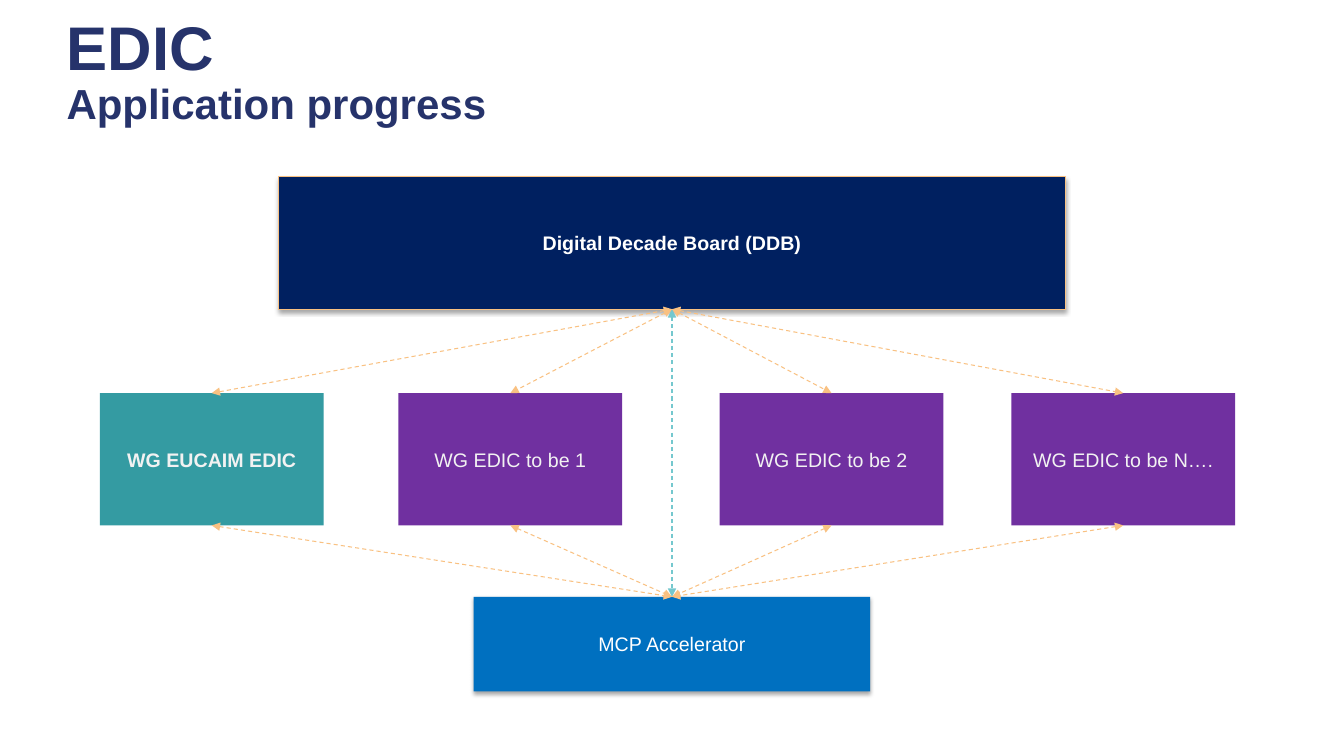
from dataclasses import dataclass

from lxml.etree import SubElement
from pptx import Presentation
from pptx.dml.color import RGBColor
from pptx.enum.dml import MSO_LINE
from pptx.enum.shapes import MSO_CONNECTOR, MSO_SHAPE
from pptx.enum.text import MSO_ANCHOR, MSO_AUTO_SIZE, PP_ALIGN
from pptx.oxml.ns import qn
from pptx.util import Inches, Pt

TOP, BOTTOM = 0, 2  # connection sites of a rectangle


@dataclass(frozen=True)
class Theme:
    font: str = "Arial"
    title: str = "26336B"
    navy: str = "002060"
    blue: str = "0070C0"
    purple: str = "7030A0"
    teal: str = "349BA2"
    aqua: str = "75C8CE"
    orange: str = "F9C182"
    white: str = "FFFFFF"
    pale: str = "F2F2F2"
    title_size: int = 44
    subtitle_size: int = 30
    box_size: int = 14
    line_width: float = 0.75


def add_text(p, text, *, font, size, color, bold=False):
    r = p.add_run()
    r.text = text
    r.font.name, r.font.size, r.font.bold = font, Pt(size), bold
    r.font.color.rgb = RGBColor.from_string(color)


class Deck:
    """Style and current slide; lengths are percentages of the slide's size."""

    def __init__(self, prs, theme):
        self.theme = theme
        self.col, self.row = prs.slide_width / 100, prs.slide_height / 100
        self.s = prs.slides.add_slide(prs.slide_layouts[5])

    def place(self, x, y, w, h):
        return (round(x * self.col), round(y * self.row),
                round(w * self.col), round(h * self.row))

    def title(self, title, subtitle, *at):
        t, sp = self.theme, self.s.shapes.title
        sp.left, sp.top, sp.width, sp.height = self.place(*at)
        tf = sp.text_frame
        tf.auto_size, tf.vertical_anchor = MSO_AUTO_SIZE.NONE, MSO_ANCHOR.MIDDLE
        p = tf.paragraphs[0]
        p.alignment, p.line_spacing = PP_ALIGN.LEFT, 0.9
        style = dict(font=t.font, color=t.title, bold=True)
        add_text(p, title, size=t.title_size, **style)
        p.add_line_break()
        add_text(p, subtitle, size=t.subtitle_size, **style)

    def box(self, text, *at, fill, color, bold=False, line=None, shadow=False):
        t = self.theme
        sp = self.s.shapes.add_shape(MSO_SHAPE.RECTANGLE, *self.place(*at))
        sp.fill.solid()
        sp.fill.fore_color.rgb = RGBColor.from_string(fill)
        if line:
            sp.line.color.rgb = RGBColor.from_string(line)
            sp.line.width = Pt(t.line_width)
        else:
            sp.line.fill.background()
        sp.shadow.inherit = False
        if shadow:
            self.drop_shadow(sp)
        tf = sp.text_frame
        tf.word_wrap, tf.vertical_anchor = True, MSO_ANCHOR.MIDDLE
        p = tf.paragraphs[0]
        p.alignment = PP_ALIGN.CENTER
        add_text(p, text, font=t.font, size=t.box_size, color=color, bold=bold)
        return sp

    def drop_shadow(self, sp):
        effects = sp._element.spPr.find(qn("a:effectLst"))
        outer = SubElement(effects, qn("a:outerShdw"), blurRad="40000",
                           dist="23000", dir="5400000", rotWithShape="0")
        black = SubElement(outer, qn("a:srgbClr"), val="000000")
        SubElement(black, qn("a:alpha"), val="34000")

    def arrow(self, upper, lower, color):
        """Two-headed dashed arrow from a bottom side to a top side."""
        c = self.s.shapes.add_connector(MSO_CONNECTOR.STRAIGHT, 0, 0, 0, 0)
        c.begin_connect(upper, BOTTOM)
        c.end_connect(lower, TOP)
        c.line.color.rgb = RGBColor.from_string(color)
        c.line.width = Pt(self.theme.line_width)
        c.line.dash_style = MSO_LINE.DASH
        ln = c.line._get_or_add_ln()
        for end in ("a:headEnd", "a:tailEnd"):
            SubElement(ln, qn(end), type="triangle")
        SubElement(c._element.spPr, qn("a:effectLst"))


def main():
    prs = Presentation()
    prs.slide_width, prs.slide_height = Inches(13.33), Inches(7.5)
    t = Theme()
    deck = Deck(prs, t)

    # Title
    deck.title("EDIC", "Application progress", 4.2, 0, 69, 19.33)

    # Board above and accelerator below, both centred
    board_w, accelerator_w, box_h = 58.5, 29.5, 17.5
    board = deck.box("Digital Decade Board (DDB)",
                     50 - board_w / 2, 23.4, board_w, box_h, fill=t.navy,
                     color=t.white, bold=True, line=t.orange, shadow=True)
    accelerator = deck.box("MCP Accelerator",
                           50 - accelerator_w / 2, 78.95, accelerator_w, 12.5,
                           fill=t.blue, color=t.white, shadow=True)

    # Working groups
    groups = [deck.box(text, x, 52, 16.65, box_h, fill=fill,
                       color=t.pale, bold=bold)
              for text, x, fill, bold in (
                  ("WG EUCAIM EDIC", 7.43, t.teal, True),
                  ("WG EDIC to be 1", 29.65, t.purple, False),
                  ("WG EDIC to be 2", 53.55, t.purple, False),
                  ("WG EDIC to be N….", 75.25, t.purple, False))]

    # Arrows between the levels
    deck.arrow(board, accelerator, t.aqua)
    for group in groups:
        deck.arrow(board, group, t.orange)
        deck.arrow(group, accelerator, t.orange)

    prs.save("out.pptx")


if __name__ == "__main__":
    main()
